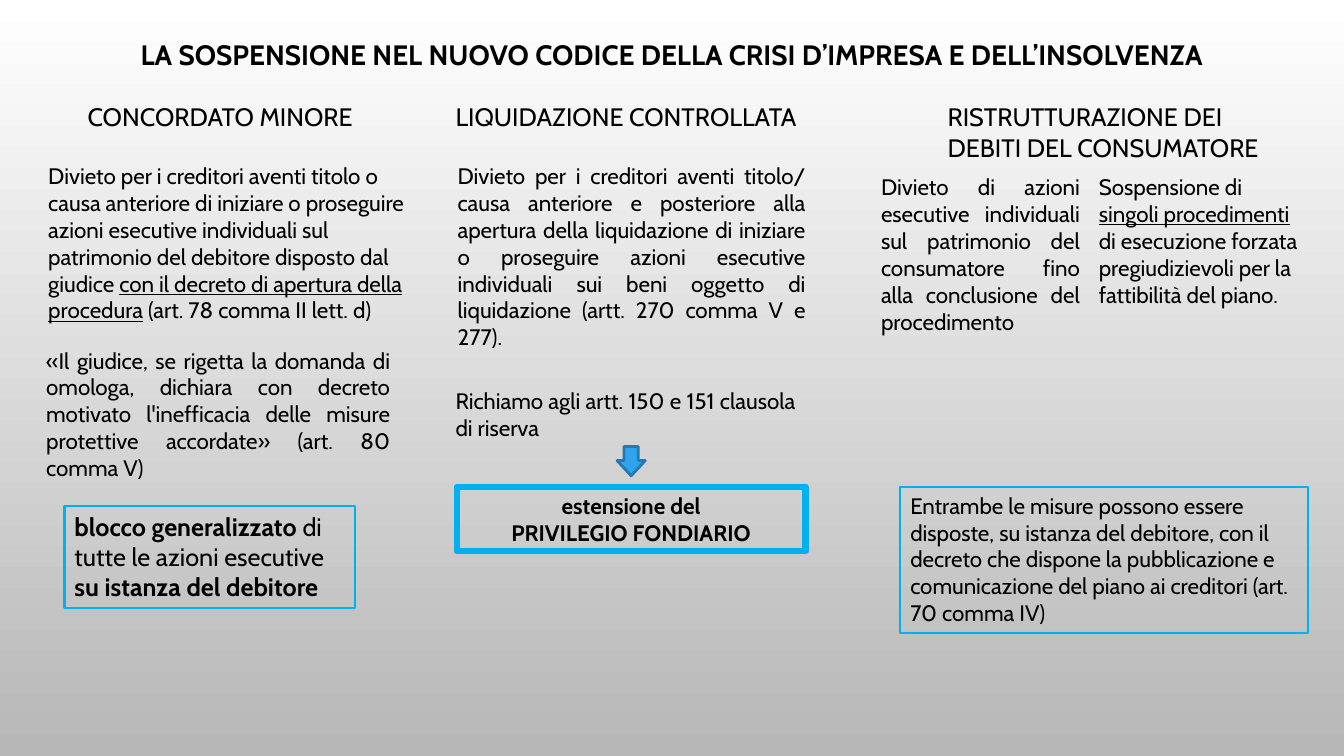
from pptx import Presentation
from pptx.dml.color import RGBColor
from pptx.enum.shapes import MSO_SHAPE as Shape
from pptx.enum.text import MSO_ANCHOR as Anchor, MSO_AUTO_SIZE as Fit, PP_ALIGN as Align
from pptx.util import Inches, Pt

BLACK = RGBColor(0x00, 0x00, 0x00)
WHITE = RGBColor(0xFF, 0xFF, 0xFF)
GREY = RGBColor(0xB7, 0xB7, 0xB7)
CYAN = RGBColor(0x00, 0xB0, 0xF0)
BLUE = RGBColor(0x2F, 0xA3, 0xEE)
NAVY = RGBColor(0x23, 0x79, 0xB0)

WIDE, HIGH = 13.33, 7.5
COLS, ROWS = 133.3, 75
LEFT, MID, FULL = Align.LEFT, Align.CENTER, Align.JUSTIFY


class Page:
    """Style and slide; places are (column, row, columns, rows)."""

    def __init__(self, deck):
        self.slide = deck.slides.add_slide(deck.slide_layouts[6])
        self.font = {"name": "Cabin", "size": Pt(16), "bold": False, "underline": False}
        self.frame = {"word_wrap": True, "auto_size": Fit.SHAPE_TO_FIT_TEXT,
                      "vertical_anchor": Anchor.TOP}

    def cell(self, col, row, cols, rows):
        x, y = WIDE / COLS, HIGH / ROWS
        return [Inches(n) for n in (col * x, row * y, cols * x, rows * y)]

    def shade(self, top, base):
        fill = self.slide.background.fill
        fill.gradient()
        fill.gradient_angle = 270
        for stop, color, place in zip(fill.gradient_stops, (top, base), (0, 1)):
            stop.color.rgb = color
            stop.position = place

    def label(self, shape, paras, align, **style):
        """Fill a shape; a paragraph is a string or a list of (text, format) runs."""
        frame = shape.text_frame
        for key, val in self.frame.items():
            setattr(frame, key, val)
        for i, runs in enumerate(paras):
            para = frame.add_paragraph() if i else frame.paragraphs[0]
            para.alignment = align
            for text, extra in [(runs, {})] if isinstance(runs, str) else runs:
                run = para.add_run()
                run.text = text
                for key, val in {**self.font, **style, **extra}.items():
                    setattr(run.font, key, val)
                run.font.color.rgb = BLACK

    def text(self, place, *paras, align=LEFT, **style):
        box = self.slide.shapes.add_textbox(*self.cell(*place))
        self.label(box, paras, align, **style)

    def shape(self, kind, place, line, width, fill=None):
        item = self.slide.shapes.add_shape(kind, *self.cell(*place))
        item.shadow.inherit = False
        if fill is None:
            item.fill.background()
        else:
            item.fill.solid()
            item.fill.fore_color.rgb = fill
        item.line.color.rgb = line
        item.line.width = Pt(width)
        return item

    def box(self, place, *paras, width=1.5, align=LEFT, **style):
        item = self.shape(Shape.RECTANGLE, place, CYAN, width)
        self.label(item, paras, align, **style)

    def arrow(self, place):
        item = self.shape(Shape.DOWN_ARROW, place, NAVY, 2, BLUE)
        item.adjustments[0], item.adjustments[1] = 0.5, 0.54


def main():
    deck = Presentation()
    deck.slide_width, deck.slide_height = Inches(WIDE), Inches(HIGH)
    page = Page(deck)
    page.shade(WHITE, GREY)
    bold, under = {"bold": True}, {"underline": True}
    head = {"size": Pt(18)}

    page.text((0, 3.2, COLS, 4.4),
              "LA SOSPENSIONE NEL NUOVO CODICE DELLA CRISI D’IMPRESA E DELL’INSOLVENZA",
              align=MID, size=Pt(20), bold=True)
    for col, cols, rows, name in (
            (7.7, 38.8, 4, "CONCORDATO MINORE"),
            (44.2, 36.9, 4, "LIQUIDAZIONE CONTROLLATA"),
            (93, 34.2, 7.1, "RISTRUTTURAZIONE DEI DEBITI DEL CONSUMATORE")):
        page.text((col, 9.6, cols, rows), name, **head)

    # Concordato minore
    page.text((3.8, 15.6, 37.5, 19.5), [
        ("Divieto per i creditori aventi titolo o causa anteriore di iniziare o "
         "proseguire azioni esecutive individuali sul patrimonio del debitore "
         "disposto dal giudice ", {}),
        ("con il decreto di apertura della procedura", under),
        (" (art. 78 comma II lett. d)", {})])
    page.text((3.6, 33.9, 36.1, 14.5),
              "«Il giudice, se rigetta la domanda di omologa, dichiara con decreto "
              "motivato l'inefficacia delle misure protettive accordate» "
              "(art. 80 comma V)", align=FULL)
    page.box((6.4, 50.2, 28.8, 10.1), [
        ("blocco generalizzato ", bold),
        ("di tutte le azioni esecutive ", {}),
        ("su istanza del debitore", bold)], **head)

    # Liquidazione controllata
    page.text((44.4, 15.6, 36.5, 19.9),
              "Divieto per i creditori aventi titolo/ causa anteriore e posteriore "
              "alla apertura della liquidazione di iniziare o proseguire azioni "
              "esecutive individuali sui beni oggetto di liquidazione "
              "(artt. 270 comma V e 277).", align=FULL)
    page.text((44.2, 37.9, 35.7, 6.4),
              "Richiamo agli artt. 150 e 151 clausola di riserva", align=FULL)
    page.box((45.3, 48.3, 34.6, 6.4), "estensione del", "PRIVILEGIO FONDIARIO",
             width=4.5, align=MID, bold=True)
    page.arrow((61.2, 44.3, 2.8, 2.9))

    # Ristrutturazione dei debiti
    page.text((86.4, 16.7, 21.7, 17.2),
              "Divieto di azioni esecutive individuali sul patrimonio del "
              "consumatore fino alla conclusione del procedimento", align=FULL)
    page.text((108, 16.7, 21.7, 17.2), [
        ("Sospensione di ", {}),
        ("singoli procedimenti ", under),
        ("di esecuzione forzata pregiudizievoli per la fattibilità del piano.", {})])
    page.box((89.3, 48.3, 40.4, 14.5),
             "Entrambe le misure possono essere disposte, su istanza del debitore, "
             "con il decreto che dispone la pubblicazione e comunicazione del piano "
             "ai creditori (art. 70 comma IV)")

    deck.save("out.pptx")


if __name__ == "__main__":
    main()
